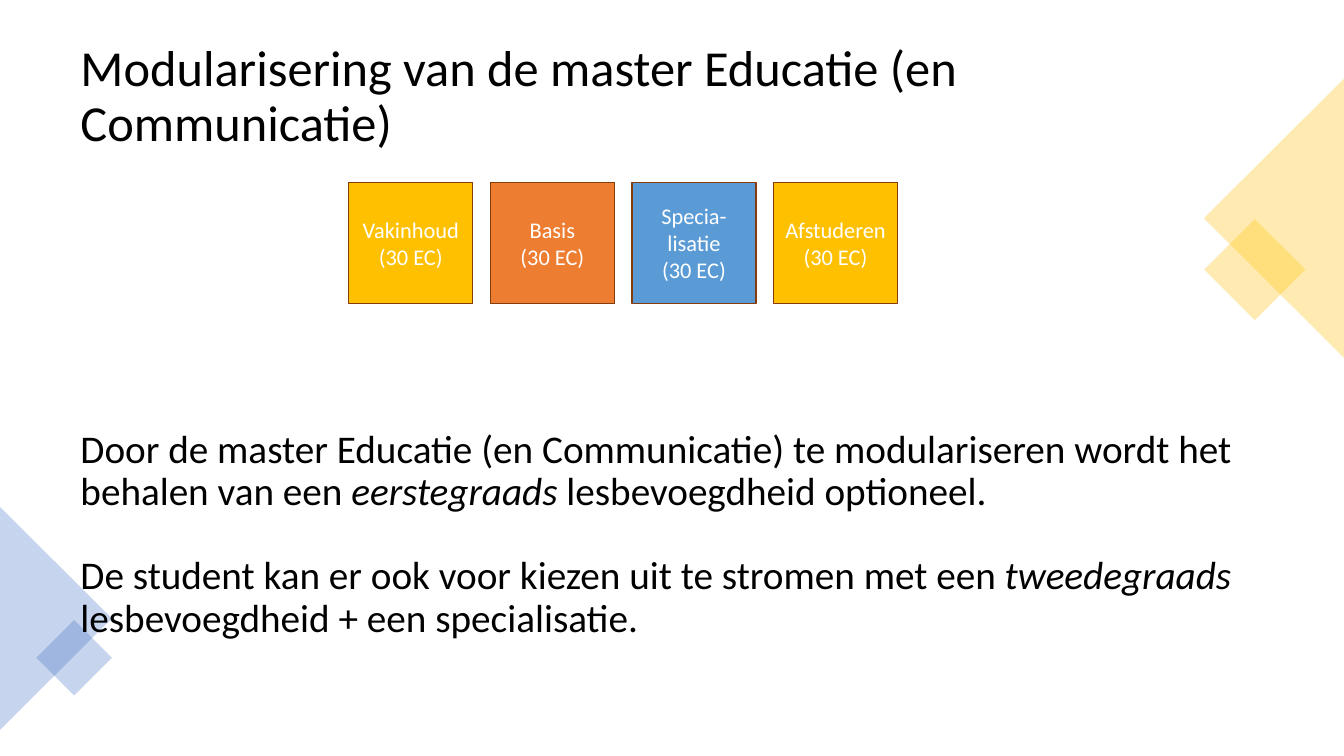
"""Build the slide on splitting the master Educatie into modules."""
from dataclasses import dataclass

from lxml import etree
from pptx import Presentation
from pptx.dml.color import RGBColor
from pptx.enum import shapes, text
from pptx.oxml import ns
from pptx.util import Inches, Pt


@dataclass(frozen=True)
class Theme:
    font: str = "Calibri"
    black: str = "000000"
    white: str = "FFFFFF"
    gold: str = "FFC000"
    orange: str = "ED7D31"
    sky: str = "5B9BD5"
    indigo: str = "4472C4"
    brown: str = "843C0B"
    title_size: int = 36
    body_size: int = 28
    module_size: int = 16


theme = Theme()


def add_span(para, words, size, color, italic=False):
    span = para.add_run()
    span.text = words
    span.font.name = theme.font
    span.font.size = Pt(size)
    span.font.italic = italic
    span.font.color.rgb = RGBColor.from_string(color)


def add_filled(page, kind, left, top, width, height, color):
    shape = page.shapes.add_shape(
        kind, Inches(left), Inches(top), Inches(width), Inches(height))
    shape.shadow.inherit = False
    shape.fill.solid()
    shape.fill.fore_color.rgb = RGBColor.from_string(color)
    shape.line.fill.background()
    return shape


deck = Presentation()
deck.slide_width, deck.slide_height = Inches(13.33), Inches(7.5)
page = deck.slides.add_slide(deck.slide_layouts[6])
rectangle = shapes.MSO_SHAPE.RECTANGLE
triangle = shapes.MSO_SHAPE.ISOSCELES_TRIANGLE

title = page.shapes.add_textbox(Inches(0.7), Inches(0.35), Inches(12.04), Inches(1.24))
title.text_frame.word_wrap = True
title.text_frame.vertical_anchor = text.MSO_ANCHOR.MIDDLE
title_para = title.text_frame.paragraphs[0]
title_para.line_spacing = 0.9
add_span(title_para, "Modularisering van de master Educatie (en Communicatie)",
         theme.title_size, theme.black)

decorations = [
    (rectangle, 12.09, 2.32, 0.71, 0.71, 45, theme.gold),
    (triangle, 11.25, 1.47, 2.77, 1.39, 270, theme.gold),
    (triangle, -0.55, 5.58, 2.21, 1.11, 90, theme.indigo),
    (rectangle, 0.47, 6.26, 0.53, 0.53, 45, theme.indigo),
]
for kind, left, top, width, height, angle, color in decorations:
    corner = add_filled(page, kind, left, top, width, height, color)
    corner.rotation = angle
    tint = corner.fill._xPr.find(".//" + ns.qn("a:srgbClr"))
    etree.SubElement(tint, ns.qn("a:alpha"), val="30000")

modules = [
    (["Vakinhoud", "(30 EC)"], theme.gold),
    (["Basis", "(30 EC)"], theme.orange),
    (["Specia-", "lisatie", "(30 EC)"], theme.sky),
    (["Afstuderen", "(30 EC)"], theme.gold),
]
for column, (lines, color) in enumerate(modules):
    box = add_filled(page, rectangle, 3.46 + 1.404 * column, 1.81, 1.23, 1.2, color)
    box.line.color.rgb = RGBColor.from_string(theme.brown)
    box.line.width = Pt(1)
    box.text_frame.word_wrap = True
    box.text_frame.vertical_anchor = text.MSO_ANCHOR.MIDDLE
    para = box.text_frame.paragraphs[0]
    para.alignment = text.PP_ALIGN.CENTER
    for number, line in enumerate(lines):
        if number:
            para.add_line_break()
        add_span(para, line, theme.module_size, theme.white)

body = page.shapes.add_textbox(Inches(0.7), Inches(4.21), Inches(11.93), Inches(2.93))
body.text_frame.word_wrap = True
statements = [
    [("Door de master Educatie (en Communicatie) te modulariseren wordt het "
      "behalen van een ", False),
     ("eerstegraads", True),
     (" lesbevoegdheid optioneel.", False)],
    [("De student kan er ook voor kiezen uit te stromen met een ", False),
     ("tweedegraads", True),
     (" lesbevoegdheid + een specialisatie.", False)],
]
for number, statement in enumerate(statements):
    para = body.text_frame.add_paragraph() if number else body.text_frame.paragraphs[0]
    para.line_spacing = 0.9
    para.space_before = Pt(30 * number)
    for words, italic in statement:
        add_span(para, words, theme.body_size, theme.black, italic)

deck.save("out.pptx")
